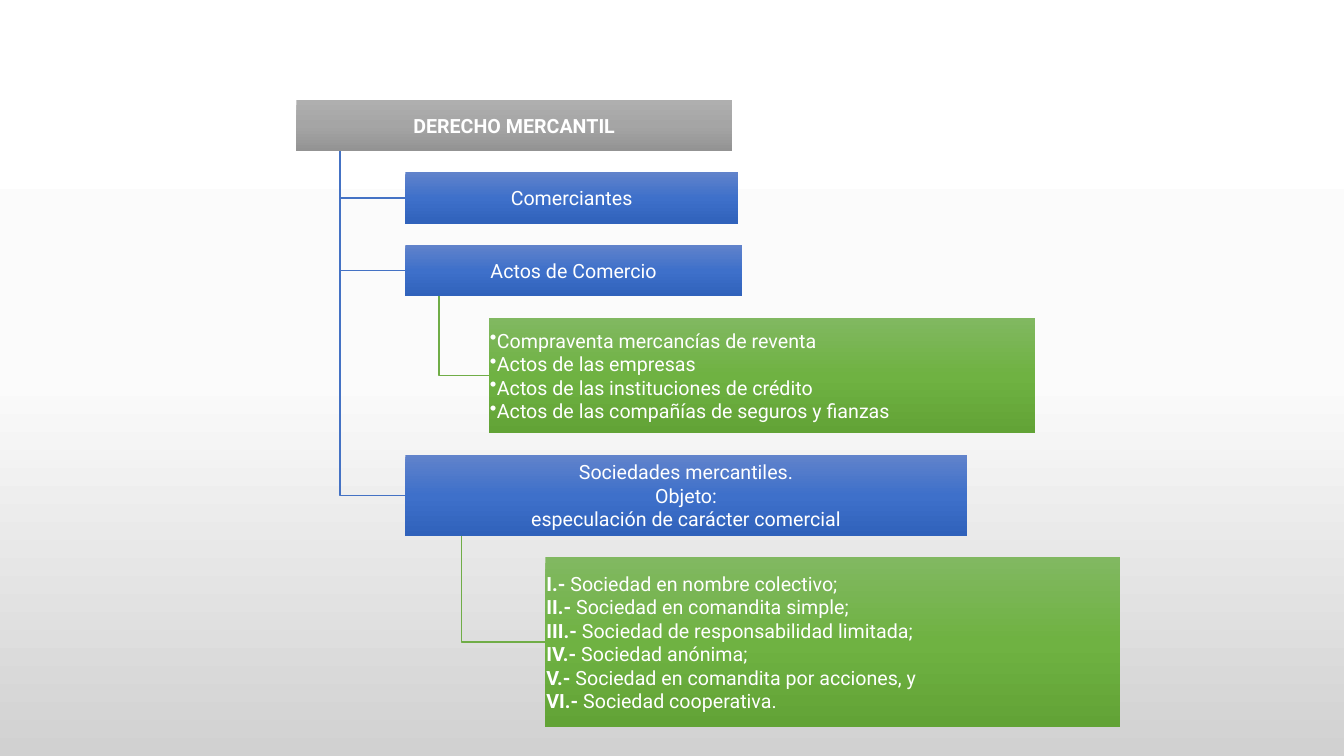
from copy import deepcopy
from dataclasses import dataclass
from typing import Optional

from lxml.etree import SubElement
from pptx import Presentation
from pptx.dml.color import RGBColor
from pptx.dml.fill import FillFormat
from pptx.enum.shapes import MSO_SHAPE
from pptx.enum.text import MSO_ANCHOR, PP_ALIGN
from pptx.oxml.ns import qn
from pptx.slide import Slide
from pptx.text.text import TextFrame
from pptx.util import Inches, Pt

WHITE = RGBColor(0xFF, 0xFF, 0xFF)
BLUE_LINE = RGBColor(0x44, 0x72, 0xC4)
GREEN_LINE = RGBColor(0x70, 0xAD, 0x47)
BACKGROUND = (WHITE, RGBColor(0xFB, 0xFB, 0xFB), RGBColor(0xD1, 0xD1, 0xD1))
GRAY = (RGBColor(0xAF, 0xAF, 0xAF), RGBColor(0xA5, 0xA5, 0xA5), RGBColor(0x93, 0x93, 0x93))
BLUE = (RGBColor(0x61, 0x83, 0xCB), RGBColor(0x3E, 0x70, 0xCA), RGBColor(0x30, 0x62, 0xBB))
GREEN = (RGBColor(0x81, 0xB8, 0x61), RGBColor(0x6F, 0xB2, 0x42), RGBColor(0x62, 0xA3, 0x36))

FIRST_TOP = 0.99
BOX_GAP = 0.21
TRUNK_SHARE = 0.1
TEXT_INSET = 0.01


@dataclass(frozen=True)
class Box:
    left: float
    width: float
    height: float
    colors: tuple[RGBColor, ...]
    lines: tuple[tuple[str, str], ...]
    parent: Optional[int] = None
    link_color: RGBColor = BLUE_LINE
    alignment: PP_ALIGN = PP_ALIGN.CENTER
    bulleted: bool = False


BOXES = (
    Box(2.94, 4.32, 0.51, GRAY, (("DERECHO MERCANTIL", ""),)),
    Box(4.02, 3.3, 0.51, BLUE, (("", "Comerciantes"),), parent=0),
    Box(4.02, 3.34, 0.51, BLUE, (("", "Actos de Comercio"),), parent=0),
    Box(4.85, 5.42, 1.15, GREEN, (
        ("", "Compraventa mercancías de reventa"),
        ("", "Actos de las empresas"),
        ("", "Actos de las instituciones de crédito"),
        ("", "Actos de las compañías de seguros y fianzas"),
    ), parent=2, link_color=GREEN_LINE, alignment=PP_ALIGN.LEFT, bulleted=True),
    Box(4.02, 5.57, 0.81, BLUE, (
        ("", "Sociedades mercantiles."),
        ("", "Objeto:"),
        ("", "especulación de carácter comercial"),
    ), parent=0),
    Box(5.41, 5.7, 1.68, GREEN, (
        ("I.- ", "Sociedad en nombre colectivo;"),
        ("II.- ", "Sociedad en comandita simple;"),
        ("III.- ", "Sociedad de responsabilidad limitada;"),
        ("IV.- ", "Sociedad anónima;"),
        ("V.- ", "Sociedad en comandita por acciones, y"),
        ("VI.- ", "Sociedad cooperativa."),
    ), parent=4, link_color=GREEN_LINE, alignment=PP_ALIGN.LEFT),
)


def apply_gradient(fill: FillFormat, owner, colors: tuple[RGBColor, ...]) -> None:
    fill.gradient()
    fill.gradient_angle = 270
    stop_list = owner.find(".//" + qn("a:gsLst"))
    stop_list.append(deepcopy(stop_list[0]))
    for index, (stop, color) in enumerate(zip(fill.gradient_stops, colors)):
        stop.position = index / (len(colors) - 1)
        stop.color.rgb = color


def write_text(
    text_frame: TextFrame,
    lines: tuple[tuple[str, str], ...],
    *,
    alignment: PP_ALIGN,
    bulleted: bool = False,
    font_name: str = "Roboto",
    size: float = 14,
    color: RGBColor = WHITE,
) -> None:
    text_frame.word_wrap = True
    text_frame.vertical_anchor = MSO_ANCHOR.MIDDLE
    text_frame.margin_left = text_frame.margin_right = Inches(TEXT_INSET)
    text_frame.margin_top = text_frame.margin_bottom = Inches(TEXT_INSET)
    for index, line in enumerate(lines):
        paragraph = text_frame.add_paragraph() if index else text_frame.paragraphs[0]
        paragraph.alignment = alignment
        if bulleted:
            properties = paragraph._p.get_or_add_pPr()
            properties.set("marL", "0")
            properties.set("indent", "0")
            SubElement(properties, qn("a:buChar")).set("char", "•")
        for part, bold in zip(line, (True, False)):
            if part:
                run = paragraph.add_run()
                run.text = part
                run.font.name = font_name
                run.font.size = Pt(size)
                run.font.bold = bold
                run.font.color.rgb = color


def draw_link(slide: Slide, parent: Box, parent_top: float, child: Box, child_top: float) -> None:
    trunk = Inches(parent.left + parent.width * TRUNK_SHARE)
    start = Inches(parent_top + parent.height)
    middle = Inches(child_top + child.height / 2)
    builder = slide.shapes.build_freeform(trunk, start)
    builder.add_line_segments([(trunk, middle), (Inches(child.left), middle)], close=False)
    shape = builder.convert_to_shape()
    shape.shadow.inherit = False
    shape.fill.background()
    shape.line.color.rgb = child.link_color
    shape.line.width = Pt(1)


def draw_box(slide: Slide, box: Box, top: float) -> None:
    shape = slide.shapes.add_shape(
        MSO_SHAPE.RECTANGLE, Inches(box.left), Inches(top), Inches(box.width), Inches(box.height)
    )
    shape.shadow.inherit = False
    apply_gradient(shape.fill, shape._element, box.colors)
    shape.line.fill.background()
    write_text(shape.text_frame, box.lines, alignment=box.alignment, bulleted=box.bulleted)


def main() -> None:
    presentation = Presentation()
    presentation.slide_width = Inches(13.33)
    presentation.slide_height = Inches(7.5)
    slide = presentation.slides.add_slide(presentation.slide_layouts[6])
    apply_gradient(slide.background.fill, slide._element, BACKGROUND)

    tops = [FIRST_TOP]
    for box in BOXES[:-1]:
        tops.append(tops[-1] + box.height + BOX_GAP)

    for box, top in reversed(list(zip(BOXES, tops))):
        if box.parent is not None:
            draw_link(slide, BOXES[box.parent], tops[box.parent], box, top)
    for box, top in zip(BOXES, tops):
        draw_box(slide, box, top)

    presentation.save("out.pptx")


if __name__ == "__main__":
    main()
